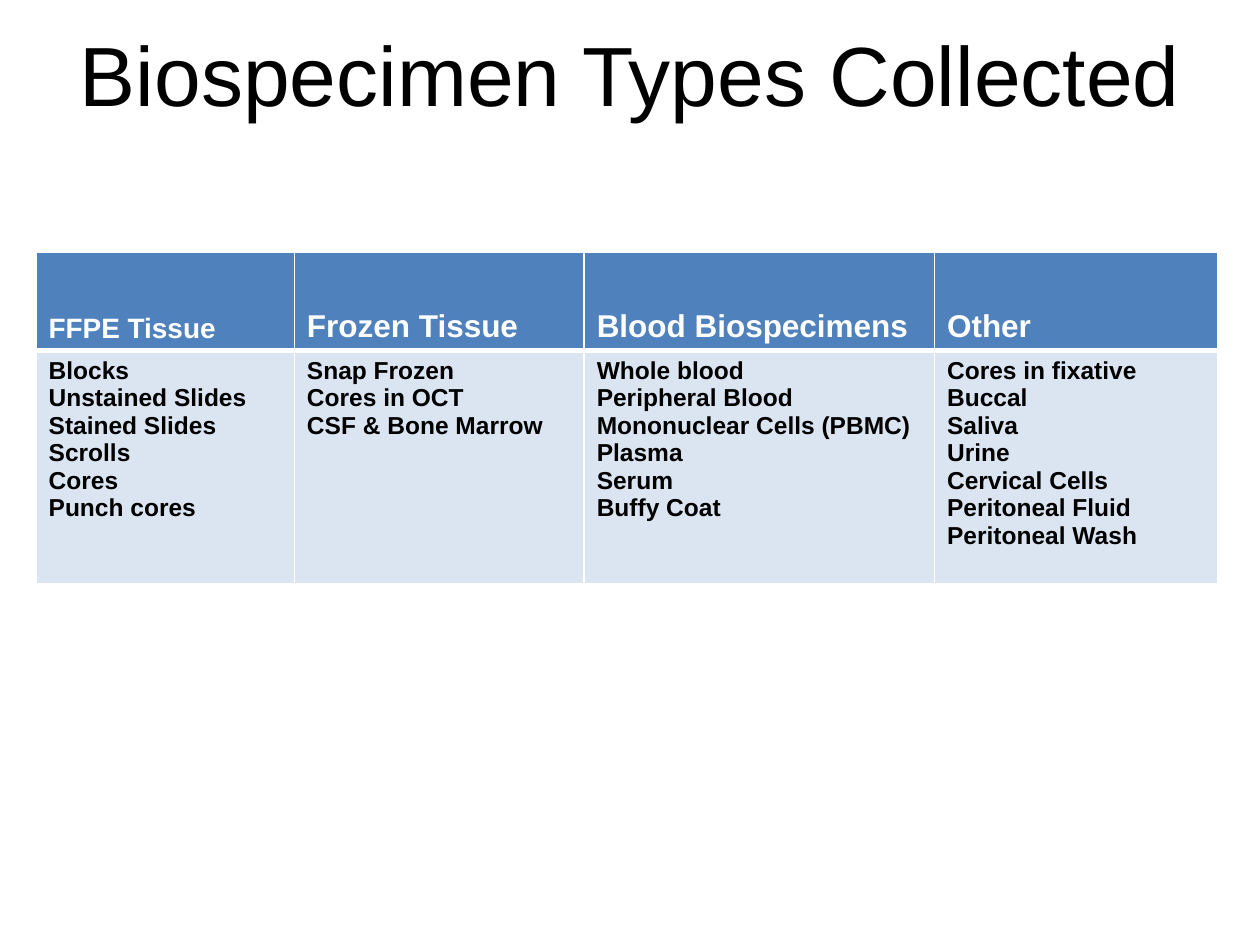
from lxml.etree import SubElement
from pptx import Presentation
from pptx.dml.color import RGBColor
from pptx.enum.text import MSO_ANCHOR, PP_ALIGN
from pptx.oxml.ns import qn
from pptx.util import Pt

BLACK = RGBColor(0x00, 0x00, 0x00)
WHITE = RGBColor(0xFF, 0xFF, 0xFF)
HEADER_BLUE = RGBColor(0x4F, 0x81, 0xBD)
BODY_BLUE = RGBColor(0xDB, 0xE5, 0xF1)

FONT = "Arial"
HEADER_HEIGHT, BODY_HEIGHT = 56.4, 133
THIN, THICK = 1, 3

# heading, heading size, column width, specimen types
SPECIMENS = [
    ("FFPE Tissue", 16, 147.6,
     ["Blocks", "Unstained Slides", "Stained Slides", "Scrolls", "Cores",
      "Punch cores"]),
    ("Frozen Tissue", 18, 165.6,
     ["Snap Frozen", "Cores in OCT", "CSF & Bone Marrow"]),
    ("Blood Biospecimens", 18, 200.2,
     ["Whole blood", "Peripheral Blood Mononuclear Cells (PBMC)", "Plasma",
      "Serum", "Buffy Coat"]),
    ("Other", 18, 162,
     ["Cores in fixative", "Buccal", "Saliva", "Urine", "Cervical Cells",
      "Peritoneal Fluid Peritoneal Wash"]),
]


def style_font(p, size, color, bold=False):
    p.font.name = FONT
    p.font.size = Pt(size)
    p.font.bold = bold
    p.font.color.rgb = color


def set_title(slide, text):
    title = slide.shapes.title
    title.left, title.top, title.width, title.height = Pt(36), Pt(9.4), Pt(648), Pt(90)
    tf = title.text_frame
    tf.text = text
    tf.vertical_anchor = MSO_ANCHOR.TOP
    p = tf.paragraphs[0]
    p.alignment = PP_ALIGN.CENTER
    style_font(p, 48, BLACK)


def set_borders(cell, top, bottom):
    """Draw white cell borders; must run before the cell gets its fill."""
    tc_pr = cell._tc.get_or_add_tcPr()
    for side, width in (("L", THIN), ("R", THIN), ("T", top), ("B", bottom)):
        ln = SubElement(tc_pr, qn(f"a:ln{side}"), w=str(Pt(width)))
        fill = SubElement(ln, qn("a:solidFill"))
        SubElement(fill, qn("a:srgbClr"), val=str(WHITE))


def fill_cell(cell, lines, size, color, background, anchor, top, bottom):
    set_borders(cell, top, bottom)
    cell.fill.solid()
    cell.fill.fore_color.rgb = background
    cell.vertical_anchor = anchor
    cell.text = "\n".join(lines)
    for p in cell.text_frame.paragraphs:
        style_font(p, size, color, bold=True)


def add_specimen_table(slide):
    total_width = sum(width for _, _, width, _ in SPECIMENS)
    table = slide.shapes.add_table(
        2, len(SPECIMENS), Pt(20.6), Pt(144),
        Pt(total_width), Pt(HEADER_HEIGHT + BODY_HEIGHT)).table
    table.horz_banding = False
    table.rows[0].height = Pt(HEADER_HEIGHT)
    table.rows[1].height = Pt(BODY_HEIGHT)
    for col, (heading, size, width, types) in enumerate(SPECIMENS):
        table.columns[col].width = Pt(width)
        fill_cell(table.cell(0, col), [heading], size, WHITE, HEADER_BLUE,
                  MSO_ANCHOR.BOTTOM, THIN, THICK)
        fill_cell(table.cell(1, col), types, 14, BLACK, BODY_BLUE,
                  MSO_ANCHOR.TOP, THICK, THIN)


def main():
    prs = Presentation()
    prs.slide_width, prs.slide_height = Pt(720), Pt(540)
    slide = prs.slides.add_slide(prs.slide_layouts.get_by_name("Title Only"))
    set_title(slide, "Biospecimen Types Collected")
    add_specimen_table(slide)
    prs.save("out.pptx")


if __name__ == "__main__":
    main()
